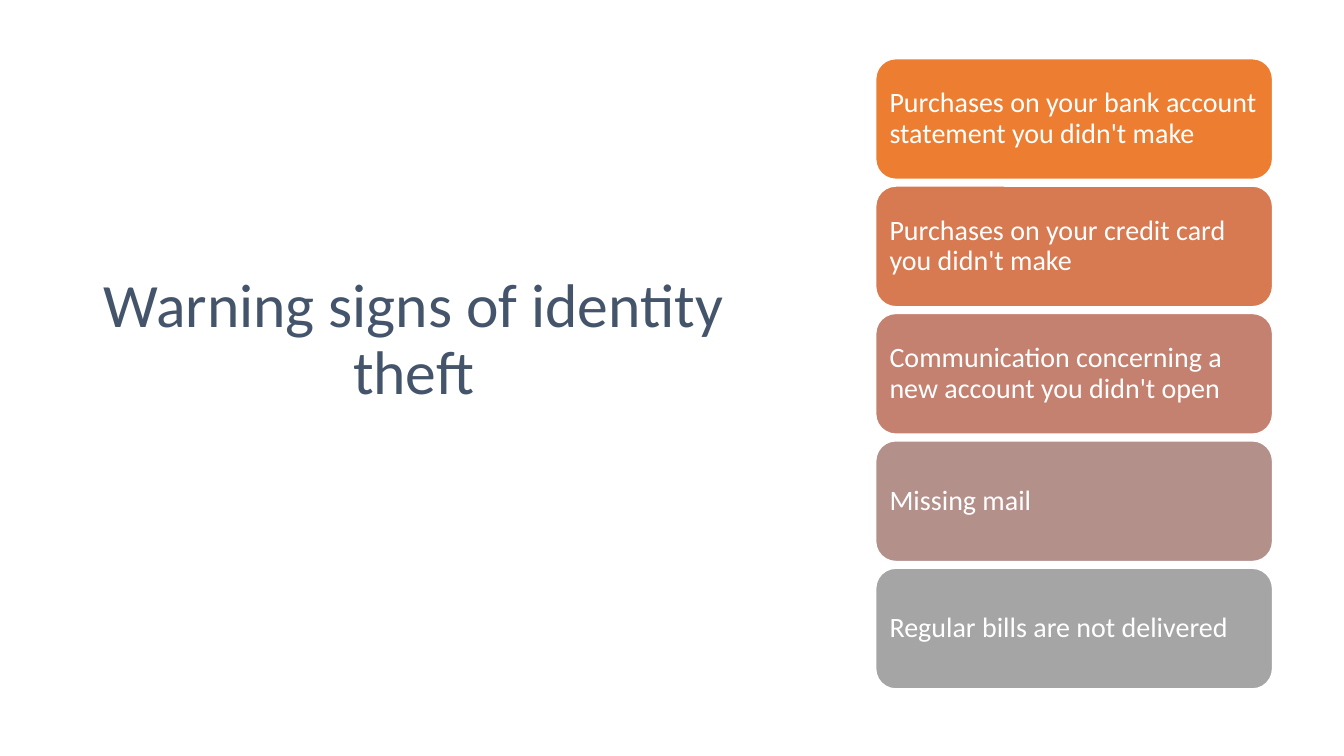
from pptx import Presentation
from pptx.dml.color import RGBColor
from pptx.enum import shapes, text
from pptx.util import Cm, Pt

WHITE = RGBColor(0xFF, 0xFF, 0xFF)
NAVY = RGBColor(0x44, 0x54, 0x6A)
ORANGE = RGBColor(0xED, 0x7D, 0x31)
RUST = RGBColor(0xD8, 0x7A, 0x51)
ROSE = RGBColor(0xC4, 0x81, 0x70)
MAUVE = RGBColor(0xB4, 0x90, 0x8B)
GREY = RGBColor(0xA5, 0xA5, 0xA5)

SIGNS = [
    ("Purchases on your bank account statement you didn't make", ORANGE),
    ("Purchases on your credit card you didn't make", RUST),
    ("Communication concerning a new account you didn't open", ROSE),
    ("Missing mail", MAUVE),
    ("Regular bills are not delivered", GREY),
]
LEFT, TOP, WIDE, HIGH, STEP = 22.07, 1.48, 10, 3.04, 3.21


def write(shape, words, size, color, align, inset):
    frame = shape.text_frame
    frame.word_wrap = True
    frame.vertical_anchor = text.MSO_ANCHOR.MIDDLE
    frame.margin_left = frame.margin_right = Cm(inset)
    frame.margin_top = frame.margin_bottom = Cm(0.2)
    para = frame.paragraphs[0]
    para.alignment = align
    para.line_spacing = 0.9
    run = para.add_run()
    run.text = words
    run.font.name = "Calibri"
    run.font.size = Pt(size)
    run.font.color.rgb = color


def add_title(slide, words):
    box = slide.shapes.add_textbox(Cm(2.08), Cm(6.5), Cm(16.69), Cm(4.19))
    write(box, words, size=44, color=NAVY, align=text.PP_ALIGN.CENTER, inset=0.25)


def add_card(slide, words, fill, top):
    card = slide.shapes.add_shape(
        shapes.MSO_SHAPE.ROUNDED_RECTANGLE, Cm(LEFT), Cm(top), Cm(WIDE), Cm(HIGH)
    )
    card.shadow.inherit = False
    card.fill.solid()
    card.fill.fore_color.rgb = fill
    card.line.color.rgb = WHITE
    card.line.width = Pt(1)
    write(card, words, size=20, color=WHITE, align=text.PP_ALIGN.LEFT, inset=0.2)


def main():
    deck = Presentation()
    deck.slide_width, deck.slide_height = Cm(33.87), Cm(19.05)
    slide = deck.slides.add_slide(deck.slide_layouts[6])
    add_title(slide, "Warning signs of identity theft")
    for row, (words, fill) in enumerate(SIGNS):
        add_card(slide, words, fill, TOP + row * STEP)
    deck.save("out.pptx")


if __name__ == "__main__":
    main()
